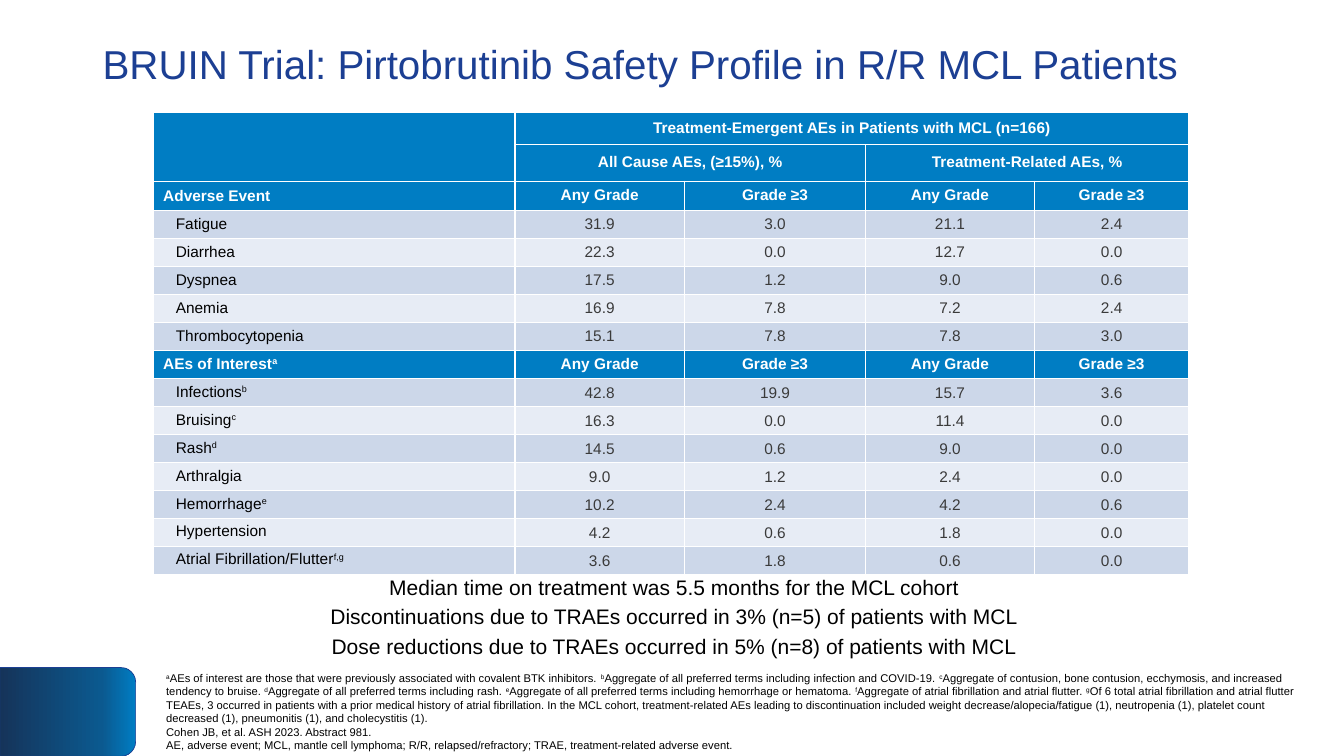
from pptx import Presentation
from pptx.dml.color import RGBColor
from pptx.enum.shapes import MSO_SHAPE
from pptx.enum.text import MSO_ANCHOR, PP_ALIGN
from pptx.oxml import parse_xml
from pptx.util import Pt

LEFT, MID = PP_ALIGN.LEFT, PP_ALIGN.CENTER
CENTRE = MSO_ANCHOR.MIDDLE
TAB = MSO_SHAPE.ROUND_2_SAME_RECTANGLE
NS = 'xmlns:a="http://schemas.openxmlformats.org/drawingml/2006/main"'
HUES = {"navy": "1C3F93", "blue": "007DC3", "deep": "0B598F", "night": "15345A",
        "odd": "CCD7E9", "even": "E7ECF5", "grey": "3A3A3A",
        "black": "000000", "white": "FFFFFF"}


def write(frame, text, size=11, hue="black", bold=False, align=LEFT,
          pitch=1.0, after=0, indent=0):
    for n, line in enumerate(text.split("\n")):
        para = frame.add_paragraph() if n else frame.paragraphs[0]
        para.alignment, para.line_spacing = align, pitch
        para.space_after = Pt(after)
        if indent:
            para._p.get_or_add_pPr().set("marL", str(Pt(indent)))
        for k, part in enumerate(line.split("^")):
            if k and not part:
                continue
            run = para.add_run()
            run.text = part
            run.font.name, run.font.size, run.font.bold = "Arial", Pt(size), bold
            run.font.color.rgb = RGBColor.from_string(HUES[hue])
            if k % 2:
                run._r.get_or_add_rPr().set("baseline", "30000")


def add_box(left, top, width, height, text, **look):
    frame = slide.shapes.add_textbox(Pt(left), Pt(top), Pt(width), Pt(height)).text_frame
    frame.word_wrap = True
    write(frame, text, **look)
    return frame


deck = Presentation()
deck.slide_width, deck.slide_height = Pt(960), Pt(540)
slide = deck.slides.add_slide(deck.slide_layouts[6])

corner = slide.shapes.add_shape(TAB, Pt(16.7), Pt(460), Pt(63.4), Pt(97))
corner.rotation = 90
corner.shadow.inherit = False
corner.line.color.rgb = RGBColor.from_string(HUES["navy"])
corner.line.width = Pt(0.5)
stops = "".join(f'<a:gs pos="{pos}000"><a:srgbClr val="{HUES[hue]}"/></a:gs>'
                for pos, hue in ((0, "blue"), (25, "deep"), (100, "night")))
corner._element.spPr.prstGeom.addnext(parse_xml(
    f'<a:gradFill {NS} rotWithShape="1"><a:gsLst>{stops}</a:gsLst>'
    '<a:lin ang="5400000" scaled="0"/></a:gradFill>'))

grades = ["Any Grade", "Grade ≥3"] * 2
rows = [
    ["", "Treatment-Emergent AEs in Patients with MCL (n=166)", "", "", ""],
    ["", "All Cause AEs, (≥15%), %", "", "Treatment-Related AEs, %", ""],
    ["Adverse Event", *grades],
    ["Fatigue", "31.9", "3.0", "21.1", "2.4"],
    ["Diarrhea", "22.3", "0.0", "12.7", "0.0"],
    ["Dyspnea", "17.5", "1.2", "9.0", "0.6"],
    ["Anemia", "16.9", "7.8", "7.2", "2.4"],
    ["Thrombocytopenia", "15.1", "7.8", "7.8", "3.0"],
    ["AEs of Interest^a^", *grades],
    ["Infections^b^", "42.8", "19.9", "15.7", "3.6"],
    ["Bruising^c^", "16.3", "0.0", "11.4", "0.0"],
    ["Rash^d^", "14.5", "0.6", "9.0", "0.0"],
    ["Arthralgia", "9.0", "1.2", "2.4", "0.0"],
    ["Hemorrhage^e^", "10.2", "2.4", "4.2", "0.6"],
    ["Hypertension", "4.2", "0.6", "1.8", "0.0"],
    ["Atrial Fibrillation/Flutter^f,g^", "3.6", "1.8", "0.6", "0.0"],
]
heads = (0, 1, 2, 8)
wides = [258.5, 121, 129.5, 120.5, 110.5]
highs = [23, 19.5, 21] + [20] * 13

grid = slide.shapes.add_table(len(rows), len(wides), Pt(109.4), Pt(80.5),
                              Pt(sum(wides)), Pt(sum(highs))).table
for col, wide in zip(grid.columns, wides):
    col.width = Pt(wide)
for row, high in zip(grid.rows, highs):
    row.height = Pt(high)
for r, c, r2, c2 in ((0, 0, 1, 0), (0, 1, 0, 4), (1, 1, 1, 2), (1, 3, 1, 4)):
    grid.cell(r, c).merge(grid.cell(r2, c2))

for r, row in enumerate(rows):
    head = r in heads
    for c, text in enumerate(row):
        cell = grid.cell(r, c)
        cell.vertical_anchor = CENTRE
        cell.margin_left = cell.margin_right = Pt(7.2 if r > 1 else 5)
        cell.margin_top = cell.margin_bottom = Pt(0 if r > 8 and c else 3.6 if r > 1 else 2.9)
        cell.fill.solid()
        fill = "blue" if head else "odd" if r % 2 else "even"
        cell.fill.fore_color.rgb = RGBColor.from_string(HUES[fill])
        for n, side in enumerate("LRTB"):
            cell._tc.get_or_add_tcPr().insert(n, parse_xml(
                f'<a:ln{side} {NS} w="12700"><a:solidFill><a:srgbClr val="{HUES["white"]}"/>'
                f'</a:solidFill></a:ln{side}>'))
        write(cell.text_frame, text, bold=head, align=MID if c else LEFT,
              hue="white" if head else "grey" if c else "black",
              pitch=1.06 if r > 8 and c else 1.07 if r == 2 and not c else 0.9,
              indent=0 if head or c else 9)

add_box(111.6, 406.8, 740, 65.5,
        "Median time on treatment was 5.5 months for the MCL cohort\n"
        "Discontinuations due to TRAEs occurred in 3% (n=5) of patients with MCL\n"
        "Dose reductions due to TRAEs occurred in 5% (n=8) of patients with MCL",
        size=15, align=MID, after=3.1)

title = add_box(66.2, 15.8, 828, 63.4,
                "BRUIN Trial: Pirtobrutinib Safety Profile in R/R MCL Patients",
                size=28.8, hue="navy", pitch=0.9)
title.vertical_anchor = CENTRE

notes = [
    "AEs of interest are those that were previously associated with covalent BTK inhibitors.",
    "Aggregate of all preferred terms including infection and COVID-19.",
    "Aggregate of contusion, bone contusion, ecchymosis, and increased tendency to bruise.",
    "Aggregate of all preferred terms including rash.",
    "Aggregate of all preferred terms including hemorrhage or hematoma.",
    "Aggregate of atrial fibrillation and atrial flutter.",
    "Of 6 total atrial fibrillation and atrial flutter TEAEs, 3 occurred in patients with "
    "a prior medical history of atrial fibrillation. In the MCL cohort, treatment-related AEs "
    "leading to discontinuation included weight decrease/alopecia/fatigue (1), neutropenia (1), "
    "platelet count decreased (1), pneumonitis (1), and cholecystitis (1).",
]
sources = ("Cohen JB, et al. ASH 2023. Abstract 981.\n"
           "AE, adverse event; MCL, mantle cell lymphoma; R/R, relapsed/refractory; "
           "TRAE, treatment-related adverse event.")
marked = " ".join(f"^{mark}^{note}" for mark, note in zip("abcdefg", notes))
foot = add_box(111.6, 476.6, 838.8, 63.4, f"{marked}\n{sources}", size=8)
foot.vertical_anchor = CENTRE
foot.margin_right = Pt(6)

deck.save("out.pptx")
